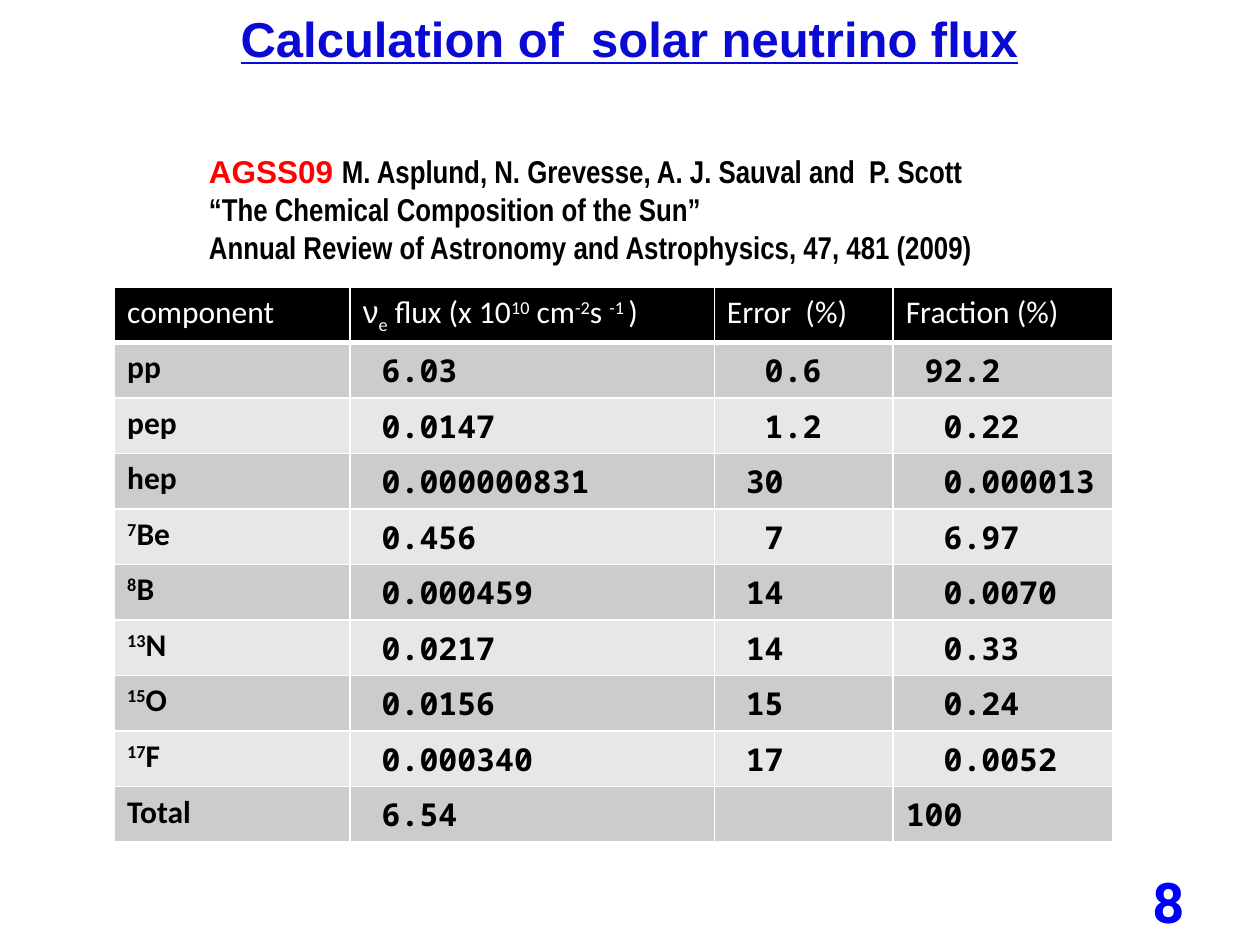
"""Build the slide listing solar neutrino fluxes by component."""
from lxml import etree
from pptx import Presentation
from pptx.dml.color import RGBColor
from pptx.enum.text import MSO_ANCHOR, MSO_AUTO_SIZE, PP_ALIGN
from pptx.oxml.ns import qn
from pptx.util import Inches, Pt

CENTER, RIGHT = PP_ALIGN.CENTER, PP_ALIGN.RIGHT
MIDDLE = MSO_ANCHOR.MIDDLE
GROW = MSO_AUTO_SIZE.SHAPE_TO_FIT_TEXT
WHITE = RGBColor(0xFF, 0xFF, 0xFF)
BLACK = RGBColor(0x00, 0x00, 0x00)
RED = RGBColor(0xFF, 0x00, 0x00)
TITLE_BLUE = RGBColor(0x0A, 0x0A, 0xD4)
NUMBER_BLUE = RGBColor(0x00, 0x00, 0xFF)
DARK_BAND = RGBColor(0xCC, 0xCC, 0xCC)
LIGHT_BAND = RGBColor(0xE7, 0xE7, 0xE7)

DIGIT_WIDTH = 0.15
COLUMN_WIDTHS = [1.87, 2.89, 1.42, 1.74]
INTEGER_PLACES = [0, 2, 3, 3]
HEADERS = [
    [("component", 0)],
    [("ν", 0), ("e", -25), (" flux (x 10", 0), ("10", 30), (" cm", 0),
     ("-2", 30), ("s ", 0), ("-1 ", 30), (")", 0)],
    [("Error  (%)", 0)],
    [("Fraction (%)", 0)],
]
COMPONENTS = [
    ("", "pp", "6.03", "0.6", "92.2"),
    ("", "pep", "0.0147", "1.2", "0.22"),
    ("", "hep", "0.000000831", "30", "0.000013"),
    ("7", "Be", "0.456", "7", "6.97"),
    ("8", "B", "0.000459", "14", "0.0070"),
    ("13", "N", "0.0217", "14", "0.33"),
    ("15", "O", "0.0156", "15", "0.24"),
    ("17", "F", "0.000340", "17", "0.0052"),
    ("", "Total", "6.54", "", "100"),
]


def add_run(paragraph, text, font_name, color, size=18, bold=True, baseline=0):
    run = paragraph.add_run()
    run.text = text
    run.font.name = font_name
    run.font.size = Pt(size)
    run.font.bold = bold
    run.font.color.rgb = color
    if baseline:
        run._r.get_or_add_rPr().set("baseline", str(baseline * 1000))
    return run


def style_cell(cell, color, bottom_width=1):
    cell.fill.solid()
    cell.fill.fore_color.rgb = color
    properties = cell._tc.get_or_add_tcPr()
    for position, side in enumerate("LRTB"):
        width = bottom_width if side == "B" else 1
        line = etree.Element(qn(f"a:ln{side}"), w=str(Pt(width)))
        fill = etree.SubElement(line, qn("a:solidFill"))
        etree.SubElement(fill, qn("a:srgbClr"), val=str(WHITE))
        properties.insert(position, line)


presentation = Presentation()
presentation.slide_width = Inches(10)
presentation.slide_height = Inches(7.5)
slide = presentation.slides.add_slide(presentation.slide_layouts[6])

table = slide.shapes.add_table(
    len(COMPONENTS) + 1, len(HEADERS),
    Inches(0.91), Inches(2.28), Inches(7.92), Inches(4.04)).table
for column, width in zip(table.columns, COLUMN_WIDTHS):
    column.width = Inches(width)

for cell, pieces in zip(table.rows[0].cells, HEADERS):
    style_cell(cell, BLACK, bottom_width=3)
    for text, baseline in pieces:
        font_name = "Arial" if text == "ν" else "Calibri"
        add_run(cell.text_frame.paragraphs[0], text, font_name, WHITE,
                bold=False, baseline=baseline)

for row_index, (mass, name, *values) in enumerate(COMPONENTS, start=1):
    cells = list(table.rows[row_index].cells)
    for cell in cells:
        style_cell(cell, DARK_BAND if row_index % 2 else LIGHT_BAND)
    paragraph = cells[0].text_frame.paragraphs[0]
    if mass:
        add_run(paragraph, mass, "Calibri", BLACK, baseline=30)
    add_run(paragraph, name, "Calibri", BLACK)
    for cell, value, places in zip(cells[1:], values, INTEGER_PLACES[1:]):
        if value:
            indent = places - len(value.split(".")[0])
            cell.margin_left = Inches(0.1 + indent * DIGIT_WIDTH)
            cell.margin_right = Inches(0.05)
            add_run(cell.text_frame.paragraphs[0], value, "Noto Sans Mono", BLACK)

reference = slide.shapes.add_textbox(
    Inches(1.56), Inches(1.16), Inches(6.5), Inches(1.01)).text_frame
reference.word_wrap = True
reference.auto_size = GROW
paragraph = reference.paragraphs[0]
add_run(paragraph, "AGSS09 ", "Arial", RED)
add_run(paragraph, "M. Asplund, N. Grevesse, A. J. Sauval and  P. Scott",
        "Arial Narrow", BLACK)
for text in ("“The Chemical Composition of the Sun”",
             "Annual Review of Astronomy and Astrophysics, 47, 481 (2009)"):
    add_run(reference.add_paragraph(), text, "Arial Narrow", BLACK)

title = slide.shapes.add_textbox(
    Inches(1.07), Inches(0.02), Inches(7.85), Inches(0.57)).text_frame
title.word_wrap = True
title.auto_size = GROW
paragraph = title.paragraphs[0]
paragraph.alignment = CENTER
run = add_run(paragraph, "Calculation of  solar neutrino flux", "Arial",
              TITLE_BLUE, size=28)
run.font.underline = True

slide_number = slide.shapes.add_textbox(
    Inches(7.17), Inches(6.95), Inches(2.33), Inches(0.4)).text_frame
slide_number.word_wrap = True
slide_number.vertical_anchor = MIDDLE
paragraph = slide_number.paragraphs[0]
paragraph.alignment = RIGHT
add_run(paragraph, "8", "Roboto", NUMBER_BLUE, size=32)

presentation.save("out.pptx")
